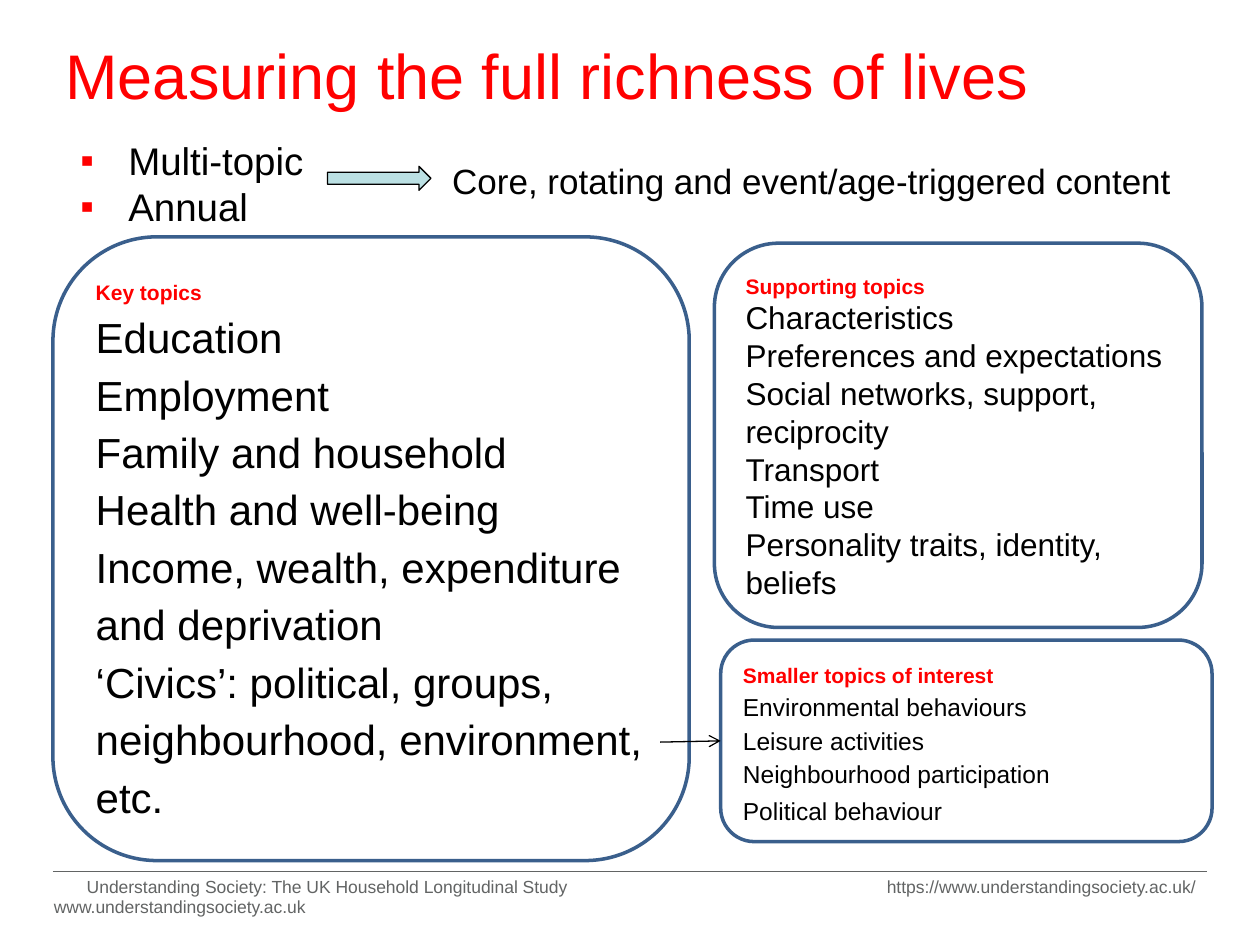
from lxml import etree
from pptx import Presentation
from pptx.dml.color import RGBColor
from pptx.enum.shapes import MSO_CONNECTOR, MSO_SHAPE
from pptx.enum.text import MSO_ANCHOR, PP_ALIGN
from pptx.oxml.ns import qn
from pptx.util import Inches, Pt

COLORS = {"red": "FF0000", "black": "000000", "white": "FFFFFF",
          "grey": "626464", "blue": "3A5F8C", "teal": "BBE0E3"}


def rgb(name):
    return RGBColor.from_string(COLORS[name])


def add_text(tf, text, size=18, color="black", bold=False, spacing=1.0, before=0,
             bullet=None, tab=None, first=False):
    p = tf.paragraphs[0] if first else tf.add_paragraph()
    pPr = p._p.get_or_add_pPr()
    if bullet:
        pPr.set("marL", str(Inches(0.38)))
        pPr.set("indent", str(-Inches(0.38)))
        buClr = etree.SubElement(pPr, qn("a:buClr"))
        etree.SubElement(buClr, qn("a:srgbClr"), val=COLORS["red"])
        etree.SubElement(pPr, qn("a:buFont"), typeface="Arial")
        etree.SubElement(pPr, qn("a:buChar"), char=bullet)
    if tab:
        tabLst = etree.SubElement(pPr, qn("a:tabLst"))
        etree.SubElement(tabLst, qn("a:tab"), pos=str(Inches(tab)), algn="r")
    p.alignment = PP_ALIGN.LEFT
    p.line_spacing = spacing
    p.space_before = Pt(before)
    r = p.add_run()
    r.text = text
    r.font.name = "Arial"
    r.font.size = Pt(size)
    r.font.bold = bold
    r.font.color.rgb = rgb(color)


prs = Presentation()
prs.slide_width, prs.slide_height = Inches(10), Inches(7.5)
s = prs.slides.add_slide(prs.slide_layouts[5])

title = s.shapes.title
title.left, title.top, title.width, title.height = (Inches(v) for v in (0.42, 0.29, 8.3, 0.68))
title.text_frame.vertical_anchor = MSO_ANCHOR.MIDDLE
add_text(title.text_frame, "Measuring the full richness of lives",
         size=36, color="red", spacing=0.9, first=True)

text_boxes = [
    ((0.33, 7.06, 4.27, 0.28), ["www.understandingsociety.ac.uk"],
     {"size": 10, "color": "grey"}),
    ((0.54, 1.04, 9.21, 0.84), ["Multi-topic", "Annual"], {"size": 22, "bullet": "▪"}),
    ((3.49, 1.22, 5.91, 0.44), ["Core, rotating and event/age-triggered content"],
     {"size": 20}),
    ((0.59, 6.9, 9.23, 0.42),
     ["Understanding Society: The UK Household Longitudinal Study"
      "\thttps://www.understandingsociety.ac.uk/"],
     {"size": 10, "color": "grey", "tab": 8.8}),
]
for box, lines, style in text_boxes:
    tf = s.shapes.add_textbox(*(Inches(v) for v in box)).text_frame
    tf.word_wrap = True
    for i, line in enumerate(lines):
        add_text(tf, line, first=i == 0, **style)

panels = [
    ((0.42, 1.88, 5.05, 4.95), MSO_ANCHOR.MIDDLE, 24, 1.14, 0, "Key topics",
     ["Education", "Employment", "Family and household", "Health and well-being",
      "Income, wealth, expenditure and deprivation",
      "‘Civics’: political, groups, neighbourhood, environment, etc."]),
    ((5.67, 1.93, 3.87, 3.05), MSO_ANCHOR.MIDDLE, 18, 1.0, 0, "Supporting topics",
     ["Characteristics", "Preferences and expectations",
      "Social networks, support, reciprocity", "Transport", "Time use",
      "Personality traits, identity, beliefs"]),
    ((5.72, 5.08, 3.9, 1.6), MSO_ANCHOR.BOTTOM, 14, 1.14, 2, "Smaller topics of interest",
     ["Environmental behaviours", "Leisure activities", "Neighbourhood participation",
      "Political behaviour"]),
]
for box, anchor, size, spacing, last_gap, heading, topics in panels:
    sp = s.shapes.add_shape(MSO_SHAPE.ROUNDED_RECTANGLE, *(Inches(v) for v in box))
    sp.shadow.inherit = False
    sp.fill.solid()
    sp.fill.fore_color.rgb = rgb("white")
    sp.line.color.rgb = rgb("blue")
    sp.line.width = Pt(2)
    tf = sp.text_frame
    tf.word_wrap = True
    tf.vertical_anchor = anchor
    add_text(tf, heading, size=12, color="red", bold=True, spacing=1.14, first=True)
    for topic in topics:
        add_text(tf, topic, size=size, spacing=spacing,
                 before=last_gap if topic == topics[-1] else 0)

arrow = s.shapes.add_shape(MSO_SHAPE.RIGHT_ARROW, Inches(2.6), Inches(1.32),
                           Inches(0.82), Inches(0.19))
arrow.shadow.inherit = False
arrow.fill.solid()
arrow.fill.fore_color.rgb = rgb("teal")
arrow.line.color.rgb = rgb("black")
arrow.line.width = Pt(0.75)

lines = [((0.42, 6.92, 9.58, 6.92), "grey", 0.5, False),
         ((5.24, 5.89, 5.72, 5.88), "black", 0.75, True)]
for ends, color, width, has_head in lines:
    line = s.shapes.add_connector(MSO_CONNECTOR.STRAIGHT, *(Inches(v) for v in ends))
    line.line.color.rgb = rgb(color)
    line.line.width = Pt(width)
    if has_head:
        etree.SubElement(line.line._get_or_add_ln(), qn("a:tailEnd"), type="arrow")
    etree.SubElement(line._element.spPr, qn("a:effectLst"))

prs.save("out.pptx")
